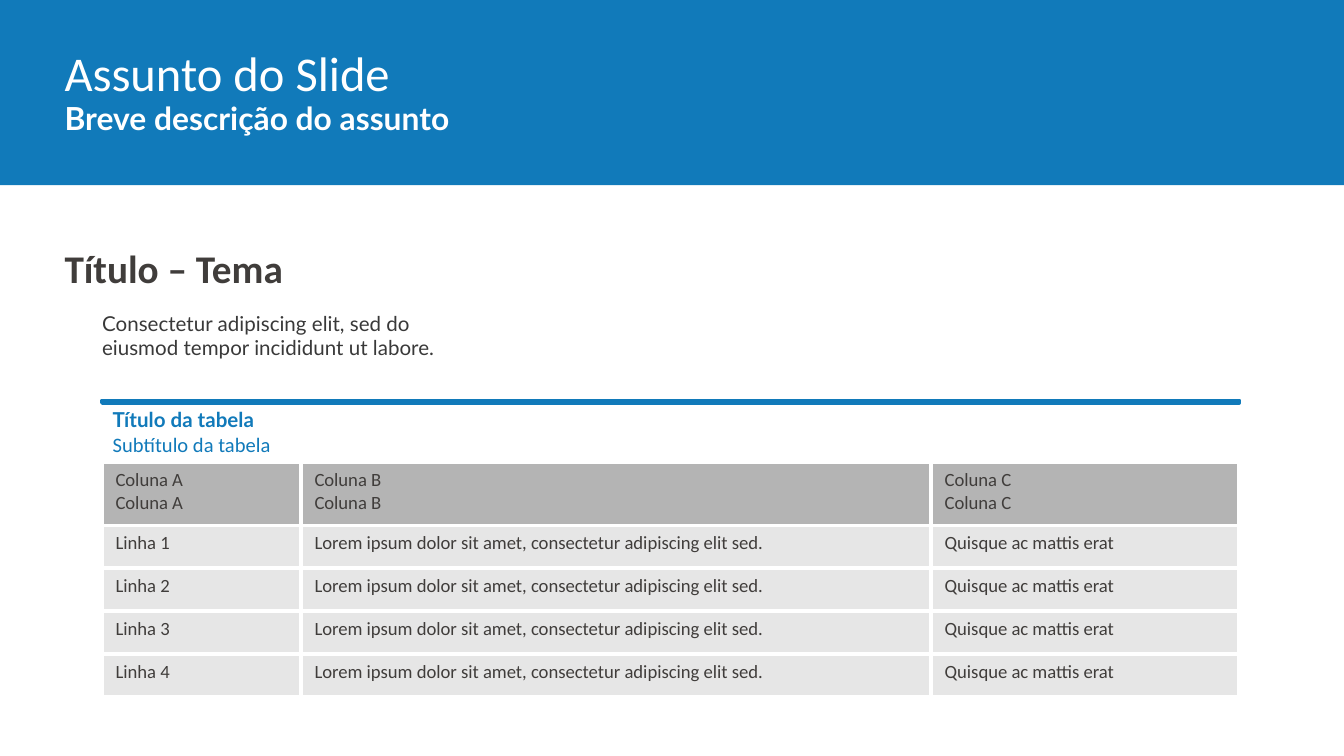
from lxml import etree
from pptx import Presentation
from pptx.dml.color import RGBColor
from pptx.enum.shapes import MSO_SHAPE
from pptx.oxml.ns import qn
from pptx.util import Cm, Pt

BLUE = RGBColor(0x11, 0x7A, 0xBA)
CYAN = RGBColor(0x47, 0xC8, 0xF2)
WHITE = RGBColor(0xFF, 0xFF, 0xFF)
DARK = RGBColor(0x40, 0x3D, 0x3B)
BODY = RGBColor(0x39, 0x39, 0x39)
HEAD_GRAY = RGBColor(0xB4, 0xB4, 0xB4)
ROW_GRAY = RGBColor(0xE6, 0xE6, 0xE6)

SLIDE_W, SLIDE_H = 25.4, 14.29
COLUMNS = [3.76, 11.91, 5.82]
HEADER_H, ROW_H = 1.19, 0.81
ROWS = [[f"Coluna {c}\nColuna {c}" for c in "ABC"]] + [
    [f"Linha {n}", "Lorem ipsum dolor sit amet, consectetur adipiscing elit sed.",
     "Quisque ac mattis erat"]
    for n in range(1, 5)
]


def add_paragraph(tf, text, *, size, color, font="Calibri", bold=False, after=0):
    """Write into the empty first paragraph, or append another one."""
    p = tf.paragraphs[0]
    if p.runs:
        p = tf.add_paragraph()
    p.space_after = Pt(after)
    r = p.add_run()
    r.text = text
    r.font.name, r.font.size, r.font.bold = font, Pt(size), bold
    r.font.color.rgb = color


def add_text_frame(slide, x, y, w, h):
    tf = slide.shapes.add_textbox(Cm(x), Cm(y), Cm(w), Cm(h)).text_frame
    tf.word_wrap = True
    tf.margin_left = tf.margin_right = tf.margin_top = tf.margin_bottom = 0
    return tf


def add_bar(slide, x, y, w, h, fill, line=None):
    sp = slide.shapes.add_shape(MSO_SHAPE.RECTANGLE, Cm(x), Cm(y), Cm(w), Cm(h))
    sp.shadow.inherit = False
    sp.fill.solid()
    sp.fill.fore_color.rgb = fill
    if line is None:
        sp.line.fill.background()
    else:
        sp.line.color.rgb = line
        sp.line.width = Pt(2)


def set_borders(cell, color, width):
    tc_pr = cell._tc.get_or_add_tcPr()
    for i, side in enumerate(("lnL", "lnR", "lnT", "lnB")):
        ln = etree.Element(qn(f"a:{side}"), w=str(Pt(width)))
        fill = etree.SubElement(ln, qn("a:solidFill"))
        etree.SubElement(fill, qn("a:srgbClr"), val=str(color))
        tc_pr.insert(i, ln)


def add_header(slide, x, y, w, h):
    add_bar(slide, x, y, w, h, BLUE)
    tf = add_text_frame(slide, x + 1.22, y + 0.81, 8.5, 1.07)
    add_paragraph(tf, "Assunto do Slide", size=26, color=WHITE)
    tf = add_text_frame(slide, x + 1.22, y + 1.86, 9.53, 1.17)
    add_paragraph(tf, "Breve descrição do assunto", size=17, color=WHITE,
                  font="Lato", bold=True)


def add_intro(slide, x, y, w, h):
    tf = add_text_frame(slide, x, y, w, 0.86)
    add_paragraph(tf, "Título – Tema", size=21, color=DARK, bold=True)
    tf = add_text_frame(slide, x + 0.71, y + 1.25, 6.93, h - 1.25)
    add_paragraph(tf, "Consectetur adipiscing elit, sed do eiusmod tempor incididunt ut labore.",
                  size=11, color=BODY, font="Lato", after=8)


def add_grid(slide, x, y, w, h):
    table = slide.shapes.add_table(len(ROWS), len(COLUMNS), Cm(x), Cm(y), Cm(w), Cm(h)).table
    for column, width in zip(table.columns, COLUMNS):
        column.width = Cm(width)
    for i, (row, values) in enumerate(zip(table.rows, ROWS)):
        row.height = Cm(ROW_H if i else HEADER_H)
        for cell, value in zip(row.cells, values):
            cell.fill.solid()
            cell.fill.fore_color.rgb = ROW_GRAY if i else HEAD_GRAY
            set_borders(cell, WHITE, 2.25)
            for line in value.split("\n"):
                add_paragraph(cell.text_frame, line, size=10, color=DARK)


def add_table_section(slide, x, y, w, h):
    add_grid(slide, x, y + 1.17, w, h - 1.17)
    tf = add_text_frame(slide, x + 0.2, y + 0.13, 6.02, 0.91)
    add_paragraph(tf, "Título da tabela", size=11, color=BLUE, font="Lato", bold=True)
    add_paragraph(tf, "Subtítulo da tabela", size=11, color=BLUE)
    add_bar(slide, x, y, w, 0.05, CYAN, line=BLUE)


def main():
    prs = Presentation()
    prs.slide_width, prs.slide_height = Cm(SLIDE_W), Cm(SLIDE_H)
    slide = prs.slides.add_slide(prs.slide_layouts[6])
    add_header(slide, 0, 0, SLIDE_W, 3.5)
    add_intro(slide, 1.22, 4.62, 8.5, 2.87)
    add_table_section(slide, 1.93, 7.57, sum(COLUMNS), 5.6)
    prs.save("out.pptx")


if __name__ == "__main__":
    main()
